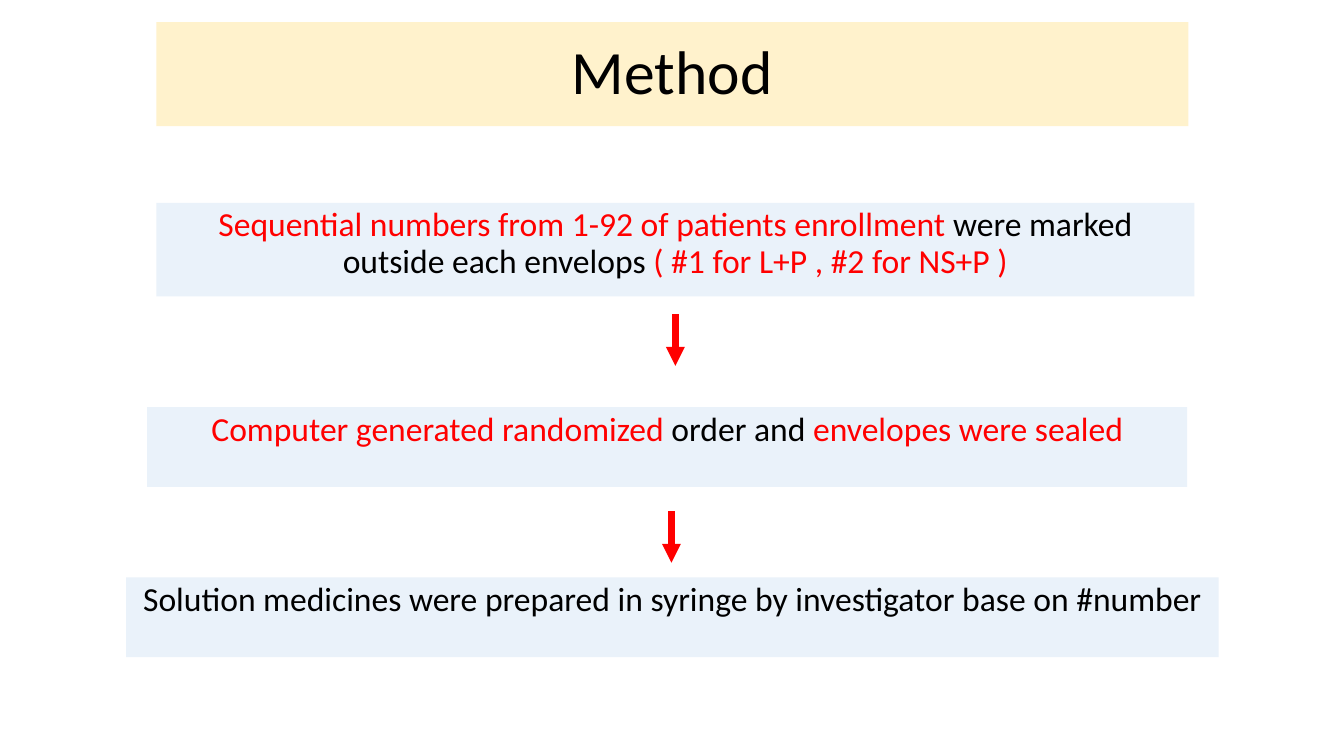
from dataclasses import dataclass

from lxml import etree
from pptx import Presentation
from pptx import util as u
from pptx.dml import color
from pptx.enum import shapes, text
from pptx.oxml import ns

BLACK = "000000"
RED = "FF0000"
CREAM = "FFF2CC"
PALE_BLUE = "EAF2FA"
ARROW_LENGTH = 1.3


@dataclass
class Phrase:
    wording: str
    colour: str = BLACK


@dataclass
class Panel:
    left: float
    top: float
    width: float
    height: float
    phrases: list[Phrase]
    fill: str = PALE_BLUE
    size: int = 24
    space_before: int = 10
    anchor: text.MSO_ANCHOR = text.MSO_ANCHOR.TOP


@dataclass
class Arrow:
    x: float
    top: float


TITLE = Panel(3.94, 0.56, 26.01, 2.62, [Phrase("Method")], CREAM, 44, 0,
              text.MSO_ANCHOR.MIDDLE)
STEPS = [
    Panel(3.94, 5.11, 26.16, 2.36, [
        Phrase("Sequential numbers from 1-92 of patients enrollment", RED),
        Phrase(" were marked outside each envelops "),
        Phrase("( #1 for L+P , #2 for NS+P )", RED),
    ]),
    Panel(3.71, 10.26, 26.21, 2.01, [
        Phrase("Computer generated randomized ", RED),
        Phrase("order and "),
        Phrase("envelopes were sealed", RED),
    ]),
    Panel(3.18, 14.55, 27.53, 2.01, [
        Phrase("Solution medicines were prepared in syringe by investigator base on #number"),
    ]),
]
ARROWS = [Arrow(17.02, 7.92), Arrow(16.92, 12.88)]


def paint(target, colour: str) -> None:
    target.rgb = color.RGBColor.from_string(colour)


def draw_panel(slide, panel: Panel) -> None:
    box = slide.shapes.add_shape(
        shapes.MSO_SHAPE.RECTANGLE, u.Cm(panel.left), u.Cm(panel.top),
        u.Cm(panel.width), u.Cm(panel.height))
    box.shadow.inherit = False
    box.line.fill.background()
    box.fill.solid()
    paint(box.fill.fore_color, panel.fill)
    box.text_frame.word_wrap = True
    box.text_frame.vertical_anchor = panel.anchor
    sentence = box.text_frame.paragraphs[0]
    sentence.alignment = text.PP_ALIGN.CENTER
    sentence.line_spacing = 0.9
    sentence.space_before = u.Pt(panel.space_before)
    sentence.font.name = "Calibri"
    sentence.font.size = u.Pt(panel.size)
    for phrase in panel.phrases:
        run = sentence.add_run()
        run.text = phrase.wording
        paint(run.font.color, phrase.colour)


def draw_arrow(slide, arrow: Arrow) -> None:
    connector = slide.shapes.add_connector(
        shapes.MSO_CONNECTOR.STRAIGHT, u.Cm(arrow.x), u.Cm(arrow.top),
        u.Cm(arrow.x), u.Cm(arrow.top + ARROW_LENGTH))
    connector.line.width = u.Pt(4.5)
    connector.line.fill.solid()
    paint(connector.line.fill.fore_color, RED)
    properties = connector._element.spPr
    outline = properties.find(ns.qn("a:ln"))
    etree.SubElement(outline, ns.qn("a:tailEnd"), type="triangle")
    etree.SubElement(properties, ns.qn("a:effectLst"))


def main() -> None:
    deck = Presentation()
    deck.slide_width, deck.slide_height = u.Cm(33.87), u.Cm(19.05)
    slide = deck.slides.add_slide(deck.slide_layouts[6])
    for panel in [TITLE, *STEPS]:
        draw_panel(slide, panel)
    for arrow in ARROWS:
        draw_arrow(slide, arrow)
    deck.save("out.pptx")


if __name__ == "__main__":
    main()
